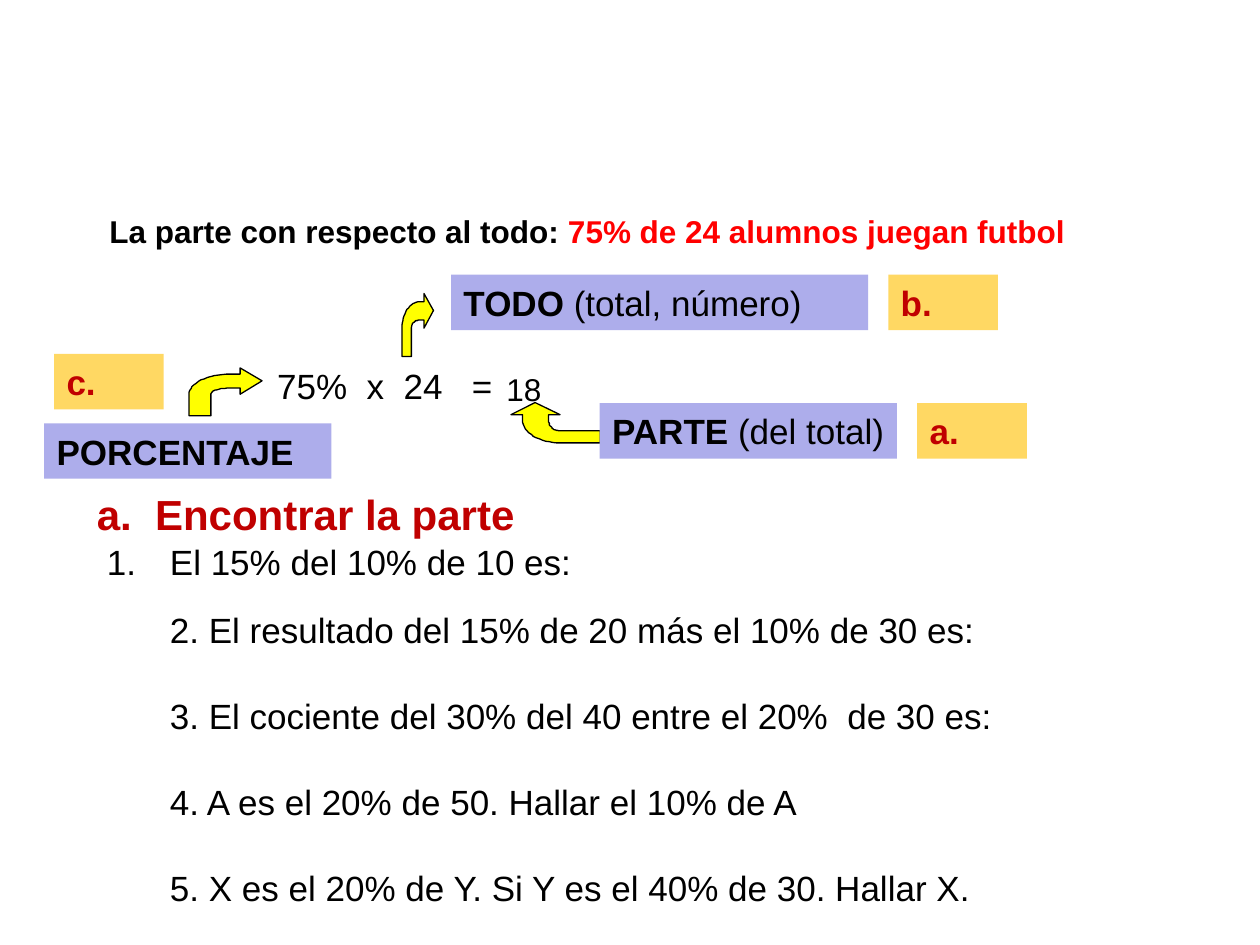
from lxml import etree
from pptx import Presentation
from pptx.dml.color import RGBColor
from pptx.enum import shapes, text
from pptx.oxml import ns
from pptx.util import Inches, Pt

COLORS = {
    "black": "000000",
    "red": "FF0000",
    "dark": "C00000",
    "lilac": "ADADEB",
    "gold": "FFC000",
    "yellow": "FFFF00",
}
FONT = "Arial"
ROW = 0.44  # height of every label

# Bent arrow in a 100 by 100 box, as straight runs and two curves
TIP = (100, 27)
OUTER = [(57, 13), (25, 13), (0, 32), (0, 55)]
INNER = [(30, 55), (30, 47), (42, 42), (57, 42)]


def rgb(name):
    return RGBColor.from_string(COLORS[name])


def add_run(para, words, size, color="black", bold=False):
    run = para.add_run()
    run.text = words
    font = run.font
    font.name, font.size, font.bold = FONT, Pt(size), bold
    font.color.rgb = rgb(color)


def add_text(slide, box, runs, wrap=True):
    """Add a text box; each run is (words, size, color, bold)."""
    frame = slide.shapes.add_textbox(*map(Inches, box)).text_frame
    frame.word_wrap = wrap
    for run in runs:
        add_run(frame.paragraphs[0], *run)
    return frame


def add_label(slide, left, top, width, fill, runs, alpha=None):
    """Add a filled box with left-aligned text."""
    box = slide.shapes.add_shape(
        shapes.MSO_SHAPE.RECTANGLE, *map(Inches, (left, top, width, ROW)))
    box.shadow.inherit = False
    box.fill.solid()
    box.fill.fore_color.rgb = rgb(fill)
    box.line.fill.background()
    if alpha:
        tone = box.fill._xPr.find(".//" + ns.qn("a:srgbClr"))
        etree.SubElement(tone, ns.qn("a:alpha")).set("val", str(alpha * 1000))
    frame = box.text_frame
    frame.word_wrap = True
    frame.vertical_anchor = text.MSO_ANCHOR.MIDDLE
    para = frame.paragraphs[0]
    para.alignment = text.PP_ALIGN.LEFT
    for run in runs:
        add_run(para, *run)


def curve(ends, steps=16):
    """Points along a cubic curve."""
    points = []
    for i in range(steps + 1):
        t = i / steps
        parts = ((1 - t) ** 3, 3 * t * (1 - t) ** 2, 3 * t * t * (1 - t), t ** 3)
        points.append(tuple(
            sum(w * p[axis] for w, p in zip(parts, ends)) for axis in (0, 1)))
    return points


def add_arrow(slide, left, top, width, height, turn=0):
    points = [(70, 0), (70, 13), *curve(OUTER), (0, 100), (30, 100),
              *curve(INNER), (70, 42), (70, 55)]
    scale = (Inches(width) / 100, Inches(height) / 100)
    form = slide.shapes.build_freeform(*TIP, scale=scale)
    form.add_line_segments(points, close=True)
    arrow = form.convert_to_shape(Inches(left), Inches(top))
    arrow.shadow.inherit = False
    arrow.fill.solid()
    arrow.fill.fore_color.rgb = rgb("yellow")
    arrow.line.color.rgb = rgb("black")
    arrow.line.width = Pt(0.75)
    arrow.rotation = turn


def add_tasks(slide, box, tasks):
    """Add the exercises; only the first has an automatic number."""
    frame = add_text(slide, box, [])
    frame.vertical_anchor = text.MSO_ANCHOR.MIDDLE
    for i, task in enumerate(tasks):
        para = frame.add_paragraph() if i else frame.paragraphs[0]
        add_run(para, task, 20)
        props = para._p.get_or_add_pPr()
        props.set("marL", str(Inches(0.5)))
        if i:
            para.space_before = Pt(15 if i == 1 else 25)
        else:
            props.set("indent", str(Inches(-0.5)))
            mark = etree.SubElement(props, ns.qn("a:buAutoNum"))
            mark.set("type", "arabicPeriod")


def main():
    deck = Presentation()
    deck.slide_width, deck.slide_height = Inches(10), Inches(7.5)
    slide = deck.slides.add_slide(deck.slide_layouts[6])

    # Equation
    frame = add_text(slide, (0.87, 2.19, 8.98, 1.45),
                     [("75%  x  24   =", 20)])
    frame.margin_left, frame.margin_top = Inches(1.33), Inches(0.7)

    # Arrows from the labels to the terms
    add_arrow(slide, 4.25, 3, 0.32, 0.71, turn=270)
    add_arrow(slide, 1.5, 2.92, 0.58, 0.38)
    add_arrow(slide, 3.19, 2.33, 0.25, 0.5)

    # Names of the terms
    for left, top, width, name, note in (
            (3.58, 2.18, 3.31, "TODO", " (total, número)"),
            (4.76, 3.2, 2.36, "PARTE", " (del total)"),
            (0.35, 3.36, 2.28, "PORCENTAJE", "")):
        runs = [(name, 20, "black", True)]
        if note:
            runs.append((note, 20))
        add_label(slide, left, top, width, "lilac", runs)

    # Letters of the cases
    for left, top, mark in (
            (7.05, 2.18, "b."), (7.28, 3.2, "a."), (0.43, 2.81, "c.")):
        add_label(slide, left, top, 0.87, "gold",
                  [(mark, 20, "dark", True)], alpha=61)

    # Exercises
    add_text(slide, (0.67, 3.83, 4.02, 0.51),
             [("a.  Encontrar la parte", 24, "dark", True)])
    add_tasks(slide, (0.75, 4.25, 7.32, 3), (
        "El 15% del 10% de 10 es:",
        "2. El resultado del 15% de 20 más el 10% de 30 es:",
        "3. El cociente del 30% del 40 entre el 20%  de 30 es:",
        "4. A es el 20% de 50. Hallar el 10% de A",
        "5. X es el 20% de Y. Si Y es el 40% de 30. Hallar X."))

    # Result and statement
    add_text(slide, (3.92, 2.89, 0.48, 0.4), [("18", 18)], wrap=False)
    add_text(slide, (0.77, 1.63, 7.98, 0.71), [
        ("La parte con respecto al todo: ", 18, "black", True),
        ("75% de 24 alumnos juegan futbol", 18, "red", True)])

    deck.save("out.pptx")


if __name__ == "__main__":
    main()
